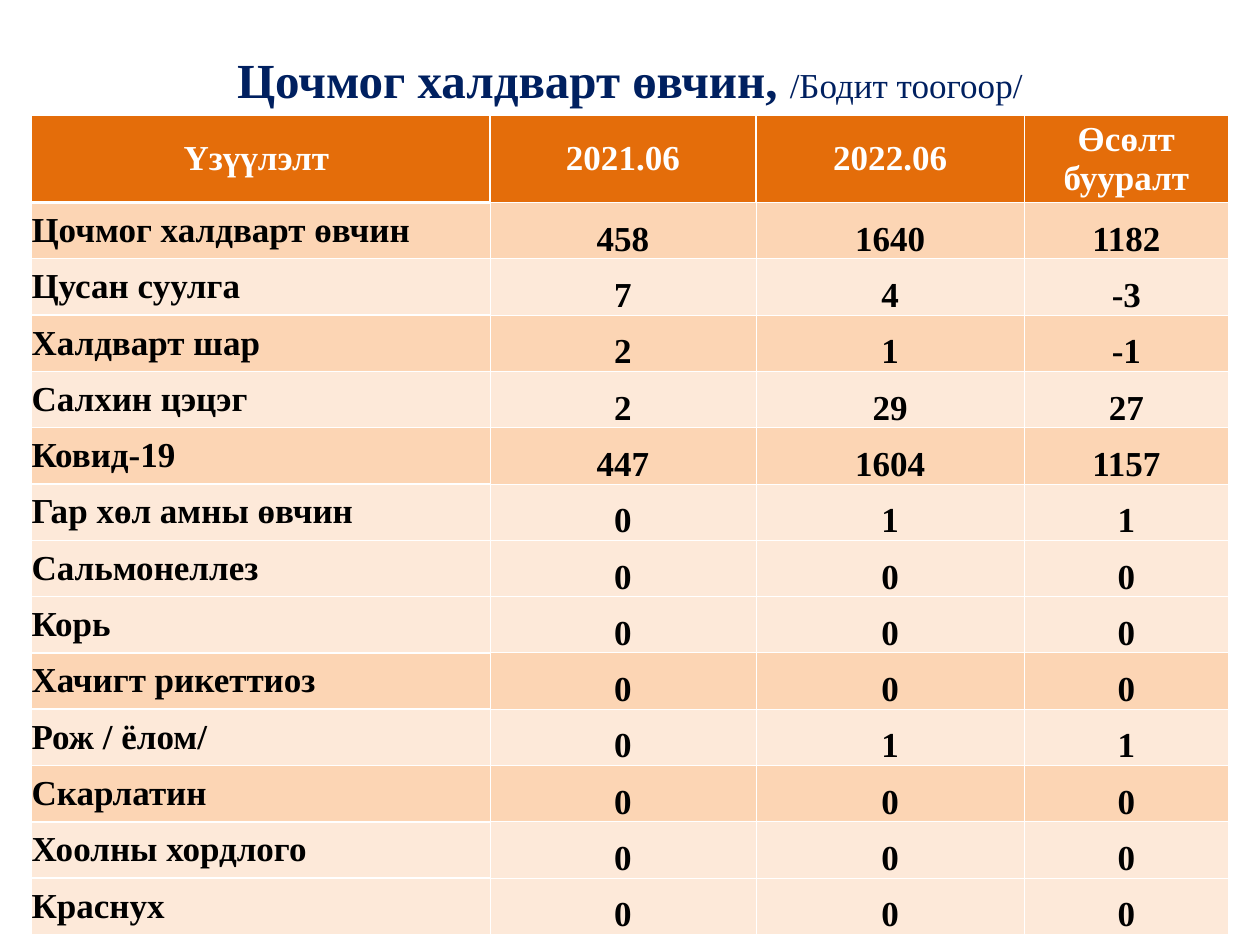
from lxml.etree import SubElement as Sub
from pptx import Presentation as Deck
from pptx.dml.color import RGBColor as Color
from pptx.enum.text import MSO_ANCHOR as Anchor, PP_ALIGN as Align
from pptx.oxml.ns import qn
from pptx.util import Pt

NAVY = Color(0x00, 0x20, 0x60)
ORANGE = Color(0xE4, 0x6D, 0x0A)
PEACH = Color(0xFC, 0xD5, 0xB4)
CREAM = Color(0xFD, 0xE9, 0xD9)
WHITE = Color(0xFF, 0xFF, 0xFF)
BLACK = Color(0x00, 0x00, 0x00)

FACE = "Times New Roman"
HEADS = ["Үзүүлэлт ", "2021.06", "2022.06", "Өсөлт бууралт"]
CASES = [
    ("Цочмог халдварт өвчин", 458, 1640, PEACH),
    ("Цусан суулга", 7, 4, CREAM),
    ("Халдварт шар", 2, 1, PEACH),
    ("Салхин цэцэг", 2, 29, CREAM),
    ("Ковид-19", 447, 1604, PEACH),
    ("Гар хөл амны өвчин", 0, 1, CREAM),
    ("Сальмонеллез", 0, 0, CREAM),
    ("Корь", 0, 0, CREAM),
    ("Хачигт рикеттиоз", 0, 0, PEACH),
    ("Рож / ёлом/", 0, 1, CREAM),
    ("Скарлатин", 0, 0, PEACH),
    ("Хоолны хордлого", 0, 0, CREAM),
    ("Краснух", 0, 0, CREAM),
]
WIDTHS = [262, 152, 153.4, 116.6]
HEAD_H = 49.7

HEAD_EDGE = {"L": 1, "R": 1, "T": 1, "B": 0.5}
CORNER_EDGE = {**HEAD_EDGE, "B": 1.5}
NAME_EDGE = {"L": 1, "R": 0.5, "T": 1, "B": 1}
TOP_EDGE = {**NAME_EDGE, "T": 1.5}
DATA_EDGE = dict.fromkeys("LRTB", 0.5)


def style(item, vals):
    for key, val in vals.items():
        setattr(item, key, val)


def write(para, text, size, color, bold=True):
    run = para.add_run()
    run.text = text
    style(run.font, {"name": FACE, "size": Pt(size), "bold": bold})
    run.font.color.rgb = color


def edge(cell, sides):
    props = cell._tc.get_or_add_tcPr()
    for side, width in sides.items():
        line = Sub(props, qn(f"a:ln{side}"), w=str(Pt(width)))
        fill = Sub(line, qn("a:solidFill"))
        Sub(fill, qn("a:srgbClr"), val=str(WHITE))


def fill_cell(cell, text, ink, back, sides, align, anchor):
    margins = dict.fromkeys(
        ["margin_left", "margin_top", "margin_right", "margin_bottom"], 0)
    style(cell, {**margins, "vertical_anchor": anchor})
    edge(cell, sides)
    cell.fill.solid()
    cell.fill.fore_color.rgb = back
    para = cell.text_frame.paragraphs[0]
    para.alignment = align
    write(para, text, 20, ink)


def add_title(slide, box):
    frame = slide.shapes.add_textbox(*map(Pt, box)).text_frame
    style(frame, {"word_wrap": True, "vertical_anchor": Anchor.MIDDLE})
    para = frame.paragraphs[0]
    para.alignment = Align.CENTER
    write(para, "Цочмог халдварт өвчин, ", 28, NAVY)
    write(para, "/Бодит тоогоор/", 20, NAVY, False)


def add_grid(slide, box):
    shape = slide.shapes.add_table(
        len(CASES) + 1, len(HEADS), *map(Pt, box))
    grid = shape.table
    for col, width in zip(grid.columns, WIDTHS):
        col.width = Pt(width)
    for row in grid.rows:
        row.height = Pt((box[3] - HEAD_H) / len(CASES))
    grid.rows[0].height = Pt(HEAD_H)

    for c, text in enumerate(HEADS):
        fill_cell(grid.cell(0, c), text, WHITE, ORANGE,
                  HEAD_EDGE if c else CORNER_EDGE,
                  Align.CENTER, Anchor.MIDDLE)
    for r, (name, old, new, back) in enumerate(CASES, 1):
        fill_cell(grid.cell(r, 0), name, BLACK, back,
                  TOP_EDGE if r == 1 else NAME_EDGE,
                  Align.LEFT, Anchor.MIDDLE)
        for c, num in enumerate((old, new, new - old), 1):
            fill_cell(grid.cell(r, c), str(num), BLACK, back,
                      DATA_EDGE, Align.CENTER, Anchor.BOTTOM)


def main():
    deck = Deck()
    style(deck, {"slide_width": Pt(720), "slide_height": Pt(540)})
    slide = deck.slides.add_slide(deck.slide_layouts[6])
    add_title(slide, (36, 18, 648, 54))
    add_grid(slide, (18, 66, 684, 468))
    deck.save("out.pptx")


if __name__ == "__main__":
    main()
